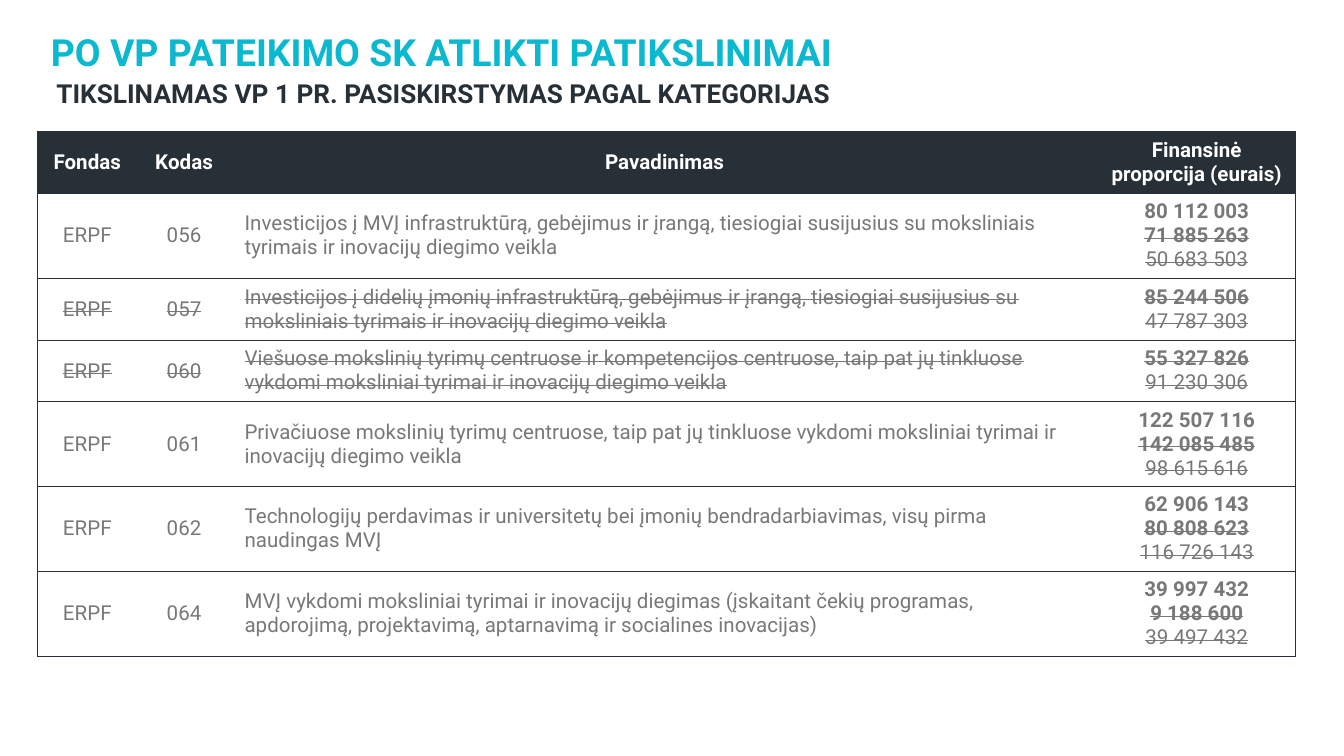
import pptx
import pptx.util
import pptx.dml.color
import pptx.enum.text
import pptx.oxml.ns
import lxml.etree

Inches = pptx.util.Inches
Pt = pptx.util.Pt
RGBColor = pptx.dml.color.RGBColor
ALIGN = pptx.enum.text.PP_ALIGN
ANCHOR = pptx.enum.text.MSO_ANCHOR
CYAN = RGBColor(0x0A, 0xB8, 0xD0)
DARK = RGBColor(0x27, 0x2F, 0x37)
GRAY = RGBColor(0x78, 0x78, 0x78)
WHITE = RGBColor(0xFF, 0xFF, 0xFF)


def write(para, text, size, color, bold=False, strike=False):
    run = para.add_run()
    run.text = text
    form = {"name": "Roboto", "size": Pt(size), "bold": bold}
    for key, value in form.items():
        setattr(run.font, key, value)
    run.font.color.rgb = color
    if strike:
        run.font._element.set("strike", "sngStrike")


def edge(cell, side, shown):
    qn = pptx.oxml.ns.qn
    props = cell._tc.get_or_add_tcPr()
    line = lxml.etree.SubElement(props, qn("a:ln" + side), w=str(Pt(0.5)))
    if shown:
        fill = lxml.etree.SubElement(line, qn("a:solidFill"))
        lxml.etree.SubElement(fill, qn("a:srgbClr"), val=str(DARK))
    else:
        lxml.etree.SubElement(line, qn("a:noFill"))


deck = pptx.Presentation()
deck.slide_width = Inches(10)
deck.slide_height = Inches(10 * 9 / 16)
slide = deck.slides.add_slide(deck.slide_layouts[6])

titles = [
    ("PO VP PATEIKIMO SK ATLIKTI PATIKSLINIMAI", 20, CYAN,
     (0.28, 0.19, 7.42, 0.43), (0.1, 0.05), ANCHOR.MIDDLE),
    ("TIKSLINAMAS VP 1 PR. PASISKIRSTYMAS PAGAL KATEGORIJAS", 14, DARK,
     (0.35, 0.6, 8.64, 0.24), (0.07, 0), ANCHOR.TOP),
]
for text, size, color, place, pad, anchor in titles:
    frame = slide.shapes.add_textbox(*map(Inches, place)).text_frame
    form = {
        "word_wrap": True,
        "vertical_anchor": anchor,
        "margin_left": Inches(pad[0]),
        "margin_right": Inches(pad[0]),
        "margin_top": Inches(pad[1]),
        "margin_bottom": Inches(pad[1]),
    }
    for key, value in form.items():
        setattr(frame, key, value)
    frame.paragraphs[0].line_spacing = 0.9
    write(frame.paragraphs[0], text, size, color, bold=True)

heads = ["Fondas", "Kodas", "Pavadinimas", "Finansinė proporcija (eurais)"]
items = [
    ("056", "Investicijos į MVĮ infrastruktūrą, gebėjimus ir įrangą, tiesiogiai susijusius su moksliniais tyrimais ir inovacijų diegimo veikla",
     ["80 112 003", "71 885 263", "50 683 503"]),
    ("057", "Investicijos į didelių įmonių infrastruktūrą, gebėjimus ir įrangą, tiesiogiai susijusius su moksliniais tyrimais ir inovacijų diegimo veikla",
     ["85 244 506", "47 787 303"]),
    ("060", "Viešuose mokslinių tyrimų centruose ir kompetencijos centruose, taip pat jų tinkluose vykdomi moksliniai tyrimai ir inovacijų diegimo veikla",
     ["55 327 826", "91 230 306"]),
    ("061", "Privačiuose mokslinių tyrimų centruose, taip pat jų tinkluose vykdomi moksliniai tyrimai ir inovacijų diegimo veikla",
     ["122 507 116", "142 085 485", "98 615 616"]),
    ("062", "Technologijų perdavimas ir universitetų bei įmonių bendradarbiavimas, visų pirma naudingas MVĮ",
     ["62 906 143", "80 808 623", "116 726 143"]),
    ("064", "MVĮ vykdomi moksliniai tyrimai ir inovacijų diegimas (įskaitant čekių programas, apdorojimą, projektavimą, aptarnavimą ir socialines inovacijas)",
     ["39 997 432", "9 188 600", "39 497 432"]),
]
rows = [[[head] for head in heads]]
rows += [[["ERPF"], [code], [name], sums] for code, name, sums in items]
wides = [0.74, 0.7, 6.45, 1.47]
highs = [0.46] + [0.63 if len(sums) == 3 else 0.46 for code, name, sums in items]

table = slide.shapes.add_table(
    len(rows), len(wides), Inches(0.28), Inches(0.98),
    Inches(sum(wides)), Inches(sum(highs))).table
table.horz_banding = False
for col, wide in zip(table.columns, wides):
    col.width = Inches(wide)

for r, row in enumerate(rows):
    table.rows[r].height = Inches(highs[r])
    gone = r > 0 and len(row[3]) == 2
    for c, lines in enumerate(row):
        cell = table.cell(r, c)
        pad = Inches(0.08 if c == 3 else 0.1)
        form = {
            "vertical_anchor": ANCHOR.MIDDLE,
            "margin_left": pad,
            "margin_right": pad,
            "margin_top": Inches(0.04),
            "margin_bottom": Inches(0.04),
        }
        for key, value in form.items():
            setattr(cell, key, value)
        shown = {"L": c == 0, "R": c == 3, "T": True, "B": True}
        for side, value in shown.items():
            edge(cell, side, value)
        cell.fill.solid()
        cell.fill.fore_color.rgb = WHITE if r else DARK
        frame = cell.text_frame
        for n, text in enumerate(lines):
            para = frame.add_paragraph() if n else frame.paragraphs[0]
            para.alignment = ALIGN.LEFT if r and c == 2 else ALIGN.CENTER
            bold = r == 0 or (c == 3 and n < len(lines) - 1)
            write(para, text, 11, GRAY if r else WHITE, bold, gone or n > 0)

deck.save("out.pptx")
